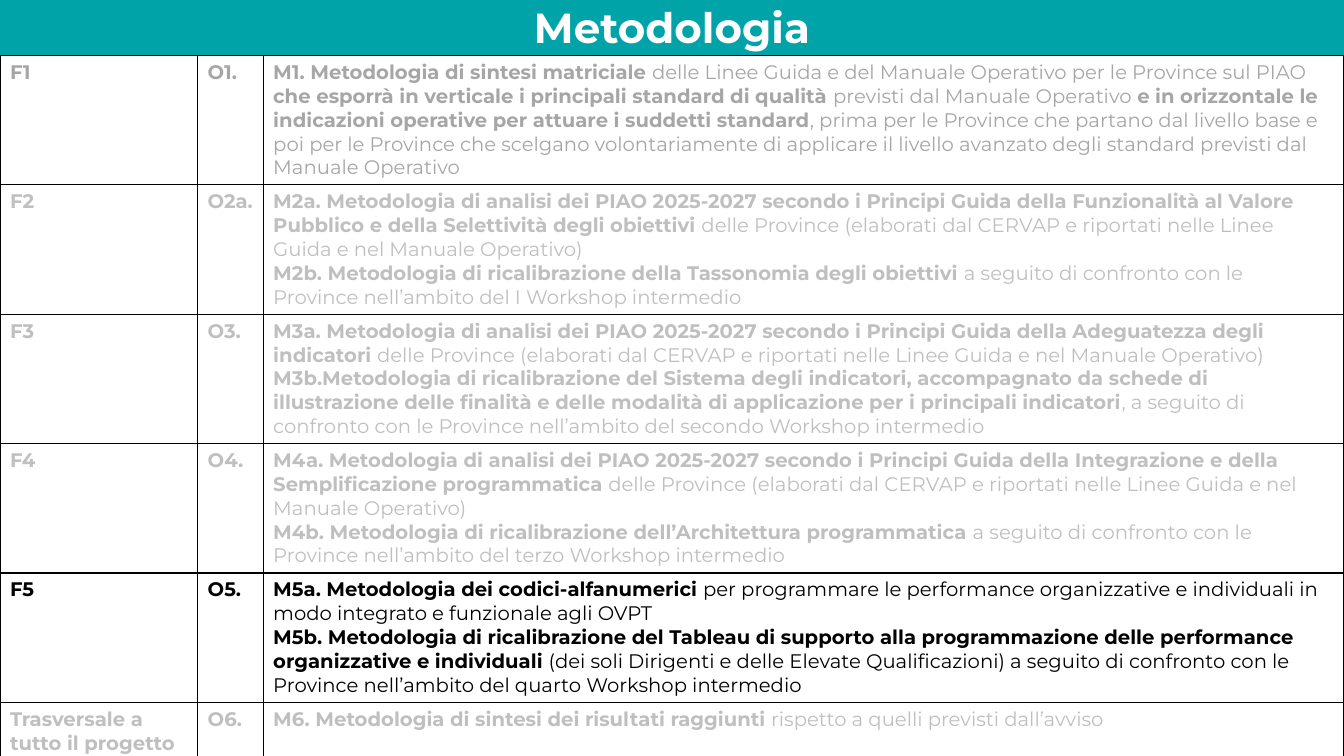
from pptx import Presentation
from pptx.dml.color import RGBColor
from pptx.enum.shapes import MSO_SHAPE
from pptx.enum.text import MSO_ANCHOR, PP_ALIGN
from pptx.oxml import parse_xml
from pptx.oxml.ns import nsdecls
from pptx.util import Inches, Pt

RECT = MSO_SHAPE.RECTANGLE
MIDDLE = MSO_ANCHOR.MIDDLE
CENTER = PP_ALIGN.CENTER

THEME = {
    "font": "Montserrat",
    "title_size": 30,
    "body_size": 14,
    "border_width": 1,
    "teal": "00A3A8",
    "white": "FFFFFF",
    "gray": "A6A6A6",
    "pale": "BFBFBF",
    "black": "000000",
}

WIDTH, HEIGHT = 13.33, 7.5
TITLE_TOP, TABLE_TOP = -0.03, 0.55
COLUMNS = [1.96, 0.65, WIDTH - 1.96 - 0.65]
ROW_HEIGHTS = [1.04] + [1.27] * 4 + [0.58]

PROVINCE = "delle Province (elaborati dal CERVAP e riportati nelle Linee Guida e nel Manuale Operativo)"
CONFRONTO = "a seguito di confronto con le Province nell’ambito del "
ANALISI = "Metodologia di analisi dei PIAO 2025-2027 secondo i Principi Guida della "

# Runs alternate between bold and regular, starting with bold.
ROWS = [
    ("F1", "O1.", "gray", [
        ["M1. Metodologia di sintesi matriciale ",
         "delle Linee Guida e del Manuale Operativo per le Province sul PIAO ",
         "che esporrà in verticale i principali standard di qualità ",
         "previsti dal Manuale Operativo ",
         "e in orizzontale le indicazioni operative per attuare i suddetti standard",
         ", prima per le Province che partano dal livello base e poi per le Province che "
         "scelgano volontariamente di applicare il livello avanzato degli standard previsti "
         "dal Manuale Operativo"],
    ]),
    ("F2", "O2a.", "pale", [
        ["M2a. " + ANALISI + "Funzionalità al Valore Pubblico e della Selettività degli obiettivi ",
         PROVINCE],
        ["M2b. Metodologia di ricalibrazione della Tassonomia degli obiettivi ",
         CONFRONTO + "I Workshop intermedio"],
    ]),
    ("F3", "O3.", "pale", [
        ["M3a. " + ANALISI + "Adeguatezza degli indicatori ", PROVINCE],
        ["M3b.Metodologia di ricalibrazione del Sistema degli indicatori, accompagnato da "
         "schede di illustrazione delle finalità e delle modalità di applicazione per i "
         "principali indicatori",
         ", " + CONFRONTO + "secondo Workshop intermedio"],
    ]),
    ("F4", "O4.", "pale", [
        ["M4a. " + ANALISI + "Integrazione e della Semplificazione programmatica ", PROVINCE],
        ["M4b. Metodologia di ricalibrazione dell’Architettura programmatica ",
         CONFRONTO + "terzo Workshop intermedio"],
    ]),
    ("F5", "O5.", "black", [
        ["M5a. Metodologia dei codici-alfanumerici ",
         "per programmare le performance organizzative e individuali in modo integrato e "
         "funzionale agli OVPT"],
        ["M5b. Metodologia di ricalibrazione del Tableau di supporto alla programmazione "
         "delle performance organizzative e individuali ",
         "(dei soli Dirigenti e delle Elevate Qualificazioni) " + CONFRONTO
         + "quarto Workshop intermedio"],
    ]),
    ("Trasversale a tutto il progetto", "O6.", "pale", [
        ["M6. Metodologia di sintesi dei risultati raggiunti",
         " rispetto a quelli previsti dall’avviso"],
    ]),
]


def add_run(p, text, size, color, bold):
    r = p.add_run()
    r.text = text
    style = {"name": THEME["font"], "size": Pt(THEME[size]), "bold": bold}
    for name, value in style.items():
        setattr(r.font, name, value)
    r.font.color.rgb = RGBColor.from_string(THEME[color])


def fill_cell(cell, paragraphs, color):
    tc_pr = cell._tc.get_or_add_tcPr()
    for side in "LRTB":
        tc_pr.append(parse_xml(
            f'<a:ln{side} {nsdecls("a")} w="{Pt(THEME["border_width"])}">'
            f'<a:solidFill><a:srgbClr val="{THEME["black"]}"/></a:solidFill></a:ln{side}>'))
    cell.fill.background()
    tf = cell.text_frame
    for i, runs in enumerate(paragraphs):
        p = tf.add_paragraph() if i else tf.paragraphs[0]
        for j, text in enumerate(runs):
            add_run(p, text, "body_size", color, j % 2 == 0)


prs = Presentation()
prs.slide_width, prs.slide_height = Inches(WIDTH), Inches(HEIGHT)
s = prs.slides.add_slide(prs.slide_layouts[6])

sp = s.shapes.add_shape(RECT, 0, Inches(TITLE_TOP), prs.slide_width,
                        Inches(TABLE_TOP - TITLE_TOP))
sp.shadow.inherit = False
sp.fill.solid()
sp.fill.fore_color.rgb = RGBColor.from_string(THEME["teal"])
sp.line.fill.background()
tf = sp.text_frame
tf.vertical_anchor = MIDDLE
p = tf.paragraphs[0]
p.alignment = CENTER
add_run(p, "Metodologia", "title_size", "white", True)

table = s.shapes.add_table(len(ROWS), len(COLUMNS), 0, Inches(TABLE_TOP),
                           prs.slide_width, Inches(sum(ROW_HEIGHTS))).table
table.first_row = False
table.horz_banding = False
for column, width in zip(table.columns, COLUMNS):
    column.width = Inches(width)
for row, height, (phase, goal, color, methods) in zip(table.rows, ROW_HEIGHTS, ROWS):
    row.height = Inches(height)
    for cell, paragraphs in zip(row.cells, ([[phase]], [[goal]], methods)):
        fill_cell(cell, paragraphs, color)

prs.save("out.pptx")
